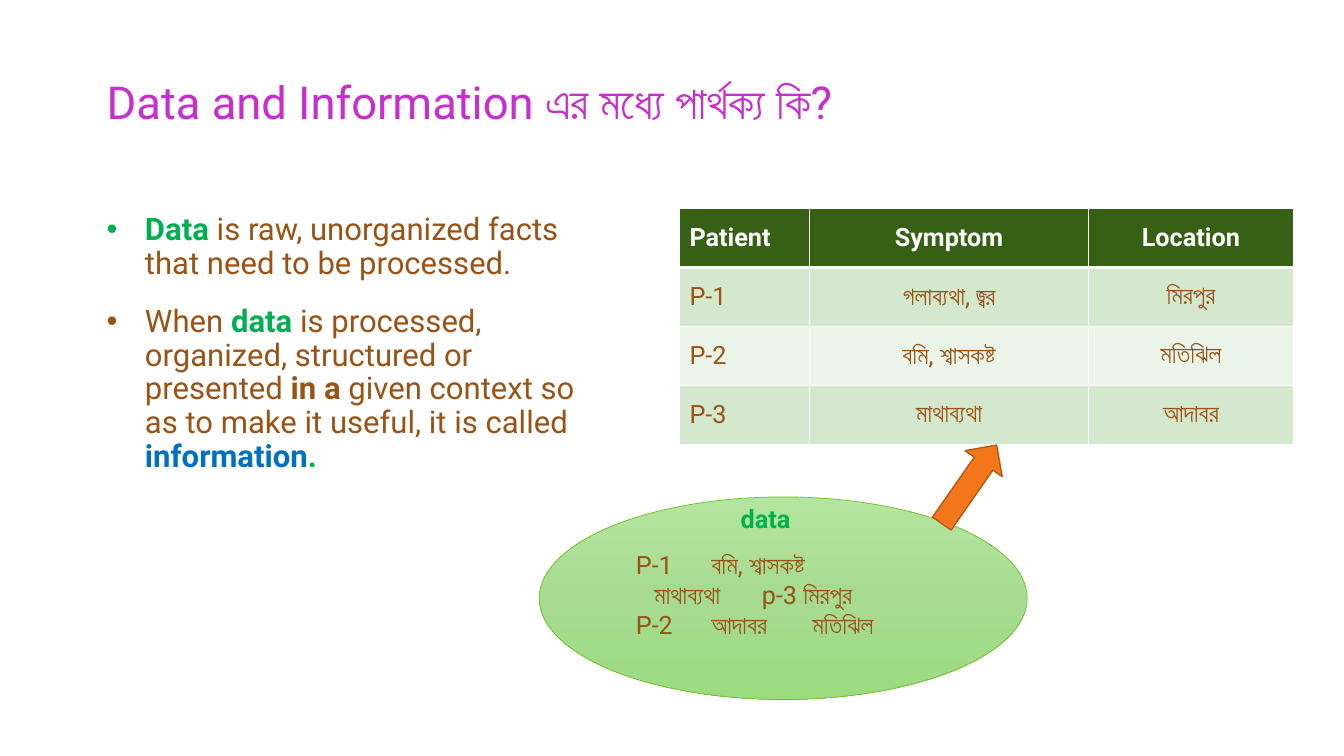
"""Build a slide contrasting data with information, with a patient table."""
from copy import deepcopy
from dataclasses import dataclass

from lxml.etree import SubElement
from pptx import Presentation
from pptx.dml.color import RGBColor
from pptx.enum.shapes import MSO_SHAPE
from pptx.enum.text import MSO_ANCHOR, PP_ALIGN
from pptx.oxml.ns import qn
from pptx.util import Inches, Pt


@dataclass(frozen=True)
class Theme:
    font: str = "Roboto"
    title_size: float = 32.4
    body_size: float = 22.2
    small_size: float = 18
    title: str = "C62ECD"
    text: str = "9A5315"
    data: str = "00B050"
    information: str = "0070C0"
    white: str = "FFFFFF"
    header: str = "366013"
    bands: tuple = ("D4E8CD", "EBF4E8")
    ellipse: tuple = ((0, "B4E59F"), (0.5, "A8DB92"), (1, "9BDB7E"))
    ellipse_line: str = "6DC025"
    arrow: str = "F3771A"
    arrow_line: str = "B45813"


THEME = Theme()
CELL = Inches(0.1)
COLUMNS, ROWS = 133.33, 75

TITLE = "Data and Information এর মধ্যে পার্থক্য কি?"
BULLETS = [
    [("Data", THEME.data, True),
     (" is raw, unorganized facts that need to be processed.", THEME.text, False)],
    [("When ", THEME.text, False), ("data", THEME.data, True),
     (" is processed, organized, structured or presented ", THEME.text, False),
     ("in a", THEME.text, True),
     (" given context so as to make it useful, it is called ", THEME.text, False),
     ("information", THEME.information, True), (".", THEME.data, True)],
]
PATIENTS = [
    ("Patient", "Symptom", "Location"),
    ("P-1", "গলাব্যথা, জ্বর", "মিরপুর"),
    ("P-2", "বমি, শ্বাসকষ্ট", "মতিঝিল"),
    ("P-3", "মাথাব্যথা", "আদাবর"),
]
SCATTERED = [
    (2.5, 9.2, "P-1\tবমি, শ্বাসকষ্ট"),
    (4.3, 12.1, "মাথাব্যথা\tp-3 মিরপুর"),
    (2.5, 7.4, "P-2\tআদাবর\tমতিঝিল"),
]
LAST_TAB = 14.1
DATA_LABEL = "data"

AREAS = {
    "title": (9.6, 7.2, 107.2, 6.1),
    "bullets": (9.6, 20.7, 50.8, 31.6),
    "table": (67.4, 20.7, 60.9, 23.4),
    "ellipse": (53.5, 49.3, 48.4, 20.1),
    "scattered": (59.6, 54, 33.8, 10.1),
    "label": (72.5, 49.4, 7.8, 4),
    "arrow": (91.4, 45.8, 9.5, 4.5),
}
TABLE_COLUMNS = (12.9, 27.7, 20.3)
BULLET_INDENT = 3.8
ARROW_ROTATION = 304.9


def grid(count):
    return round(count * CELL)


def place(name):
    return [grid(count) for count in AREAS[name]]


def color(value):
    return RGBColor.from_string(value)


def style(font, size, value, bold=False):
    font.name, font.size, font.bold = THEME.font, Pt(size), bold
    font.color.rgb = color(value)


def add_text(slide, name, wrap=True):
    frame = slide.shapes.add_textbox(*place(name)).text_frame
    frame.word_wrap = wrap
    return frame


def paragraphs(frame, items):
    for index, item in enumerate(items):
        yield frame.add_paragraph() if index else frame.paragraphs[0], item


def add_title(slide):
    frame = add_text(slide, "title")
    frame.vertical_anchor = MSO_ANCHOR.BOTTOM
    paragraph = frame.paragraphs[0]
    paragraph.text = TITLE
    paragraph.line_spacing = 0.9
    style(paragraph.font, THEME.title_size, THEME.title)


def add_bullets(slide):
    for index, (paragraph, parts) in enumerate(paragraphs(add_text(slide, "bullets"), BULLETS)):
        properties = paragraph._p.get_or_add_pPr()
        properties.set("marL", str(grid(BULLET_INDENT)))
        properties.set("indent", str(-grid(BULLET_INDENT)))
        bullet_color = SubElement(properties, qn("a:buClr"))
        SubElement(bullet_color, qn("a:srgbClr"), val=parts[0][1])
        SubElement(properties, qn("a:buFont"), typeface="Arial")
        SubElement(properties, qn("a:buChar"), char="•")
        paragraph.line_spacing = 0.9
        if index:
            paragraph.space_before = Pt(18)
        for text, value, bold in parts:
            run = paragraph.add_run()
            run.text = text
            style(run.font, THEME.body_size, value, bold)


def add_borders(cell, row):
    properties = cell._tc.get_or_add_tcPr()
    widths = {"L": 1, "R": 1, "T": 3 if row == 1 else 1, "B": 3 if row == 0 else 1}
    for side, width in widths.items():
        line = SubElement(properties, qn(f"a:ln{side}"), w=str(Pt(width)))
        SubElement(SubElement(line, qn("a:solidFill")), qn("a:srgbClr"), val=THEME.white)


def add_patients(slide):
    table = slide.shapes.add_table(len(PATIENTS), len(TABLE_COLUMNS), *place("table")).table
    for column, width in zip(table.columns, TABLE_COLUMNS):
        column.width = grid(width)
    for row, texts in enumerate(PATIENTS):
        for column, text in enumerate(texts):
            cell = table.cell(row, column)
            add_borders(cell, row)
            cell.fill.solid()
            cell.fill.fore_color.rgb = color(THEME.bands[(row - 1) % 2] if row else THEME.header)
            cell.vertical_anchor = MSO_ANCHOR.MIDDLE
            paragraph = cell.text_frame.paragraphs[0]
            paragraph.text = text
            paragraph.alignment = PP_ALIGN.CENTER if column else PP_ALIGN.LEFT
            style(paragraph.font, THEME.small_size, THEME.text if row else THEME.white, row == 0)


def add_figure(slide, kind, name, line_color, line_width):
    shape = slide.shapes.add_shape(kind, *place(name))
    shape.shadow.inherit = False
    shape.line.color.rgb = color(line_color)
    shape.line.width = Pt(line_width)
    return shape


def add_ellipse(slide):
    fill = add_figure(slide, MSO_SHAPE.OVAL, "ellipse", THEME.ellipse_line, 0.5).fill
    fill.gradient()
    fill.gradient_angle = 270
    first = fill.gradient_stops[0]._gs
    first.addnext(deepcopy(first))
    for stop, (position, value) in zip(fill.gradient_stops, THEME.ellipse):
        stop.position = position
        stop.color.rgb = color(value)


def add_scattered(slide):
    for paragraph, (indent, tab, text) in paragraphs(add_text(slide, "scattered"), SCATTERED):
        properties = paragraph._p.get_or_add_pPr()
        properties.set("marL", "0")
        properties.set("indent", str(grid(indent)))
        tabs = SubElement(properties, qn("a:tabLst"))
        for position in (tab, LAST_TAB):
            SubElement(tabs, qn("a:tab"), pos=str(grid(position)), algn="l")
        paragraph.text = text
        style(paragraph.font, THEME.small_size, THEME.text)


def add_label(slide):
    paragraph = add_text(slide, "label", wrap=False).paragraphs[0]
    paragraph.text = DATA_LABEL
    style(paragraph.font, THEME.small_size, THEME.data, True)


def add_arrow(slide):
    arrow = add_figure(slide, MSO_SHAPE.RIGHT_ARROW, "arrow", THEME.arrow_line, 1)
    arrow.fill.solid()
    arrow.fill.fore_color.rgb = color(THEME.arrow)
    arrow.rotation = ARROW_ROTATION


def main():
    presentation = Presentation()
    presentation.slide_width, presentation.slide_height = grid(COLUMNS), grid(ROWS)
    slide = presentation.slides.add_slide(presentation.slide_layouts[6])
    for add_part in (add_bullets, add_title, add_patients, add_ellipse,
                     add_scattered, add_label, add_arrow):
        add_part(slide)
    presentation.save("out.pptx")


if __name__ == "__main__":
    main()
